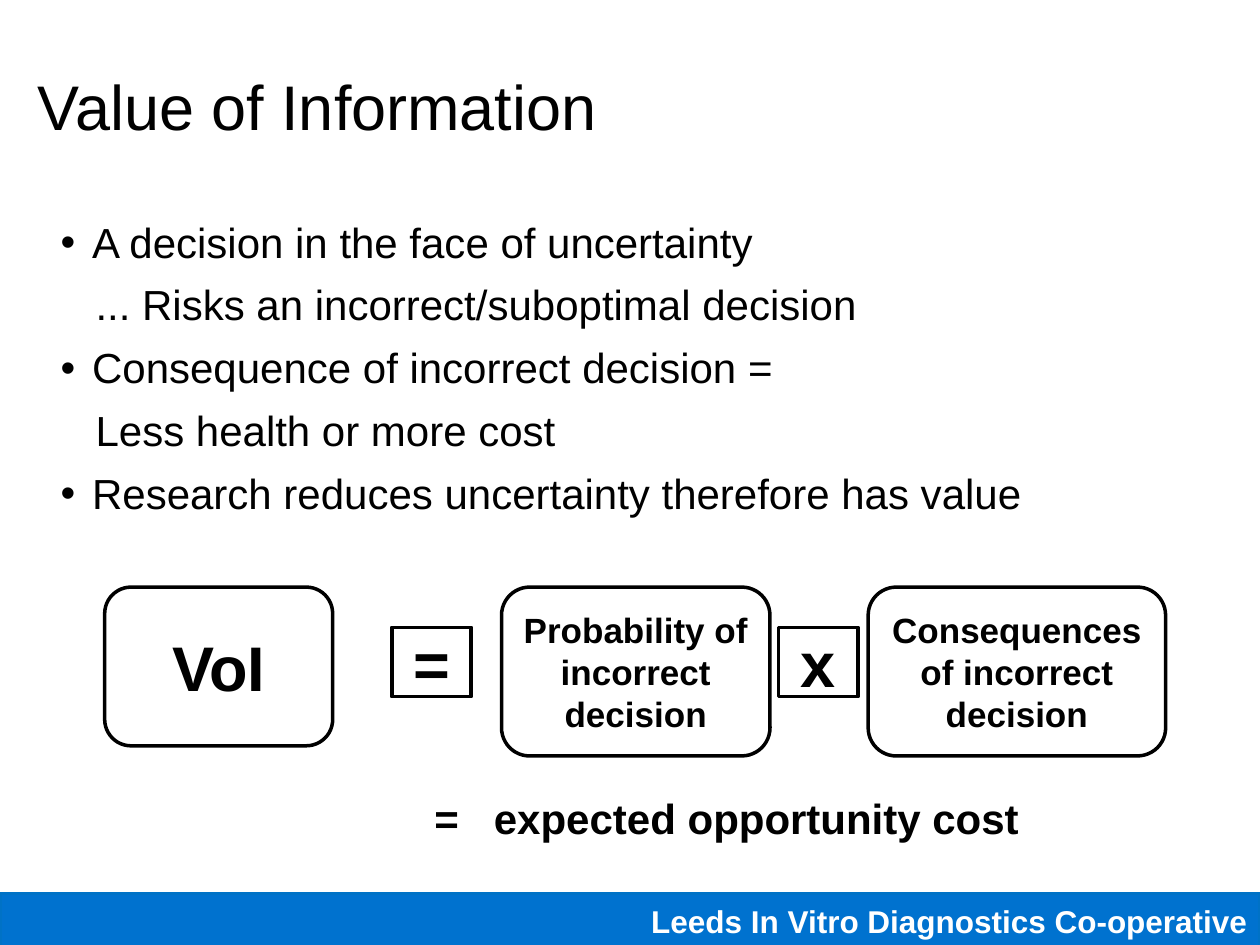
"""Build the Value of Information slide."""
from dataclasses import dataclass

import pptx
import pptx.dml.color
import pptx.enum.shapes
import pptx.enum.text
import pptx.oxml
import pptx.oxml.ns
import pptx.util

Pt = pptx.util.Pt
Kind = pptx.enum.shapes.MSO_SHAPE
Align = pptx.enum.text.PP_ALIGN
Anchor = pptx.enum.text.MSO_ANCHOR
INK = {"text": "000000", "paper": "FFFFFF", "bar": "0072CF", "edge": "0072C6"}


@dataclass
class Box:
    text: str
    left: float
    top: float
    width: float
    height: float
    size: float
    kind: int = Kind.ROUNDED_RECTANGLE
    fill: str = "paper"
    line: str = "text"
    ink: str = "text"
    align: int = Align.CENTER


@dataclass
class Item:
    text: str
    mark: bool = True


BOXES = [
    Box("Leeds In Vitro Diagnostics Co-operative", 0, 510.5, 720, 31.7, 18,
        Kind.RECTANGLE, "bar", "edge", "paper", Align.RIGHT),
    Box("VoI", 59.8, 335.5, 130.3, 90.7, 36),
    Box("Probability of incorrect decision", 286.6, 335.5, 153.4, 96.5, 20),
    Box("Consequences of incorrect decision", 496.1, 335.5, 170, 96.5, 20),
    Box("=", 223.9, 358.5, 45.4, 39.6, 36, Kind.RECTANGLE),
    Box("x", 445, 358.5, 45.4, 39.6, 36, Kind.RECTANGLE),
]
ITEMS = [
    Item("A decision in the face of uncertainty"),
    Item("... Risks an incorrect/suboptimal decision", False),
    Item("Consequence of incorrect decision ="),
    Item("Less health or more cost", False),
    Item("Research reduces uncertainty therefore has value"),
]


def tint(key: str) -> pptx.dml.color.RGBColor:
    """Return a named colour."""
    return pptx.dml.color.RGBColor.from_string(INK[key])


def style(para, size: float, bold: bool = False, ink: str = "text") -> None:
    """Format the runs of a paragraph."""
    for run in para.runs:
        run.font.name = "Arial"
        run.font.size = Pt(size)
        run.font.bold = bold
        run.font.color.rgb = tint(ink)


def place(shape, left: float, top: float, width: float, height: float) -> None:
    """Move and size a shape."""
    shape.left, shape.top = Pt(left), Pt(top)
    shape.width, shape.height = Pt(width), Pt(height)


def add_mark(para, tag: str, **attrs: str) -> None:
    """Append an element to the paragraph properties."""
    node = pptx.oxml.parse_xml(f"<a:{tag} {pptx.oxml.ns.nsdecls('a')}/>")
    for name, value in attrs.items():
        node.set(name, value)
    para._p.get_or_add_pPr().append(node)


def draw_box(slide, box: Box) -> None:
    """Draw a filled box with its label."""
    shape = slide.shapes.add_shape(
        box.kind, Pt(box.left), Pt(box.top), Pt(box.width), Pt(box.height))
    shape.shadow.inherit = False
    shape.fill.solid()
    shape.fill.fore_color.rgb = tint(box.fill)
    shape.line.color.rgb = tint(box.line)
    shape.line.width = Pt(2)
    frame = shape.text_frame
    frame.text = box.text
    frame.word_wrap = True
    frame.vertical_anchor = Anchor.MIDDLE
    para = frame.paragraphs[0]
    para.alignment = box.align
    style(para, box.size, True, box.ink)


def draw_title(shape, text: str) -> None:
    """Fill the title placeholder."""
    place(shape, 14.4, 15.1, 648, 90)
    frame = shape.text_frame
    frame.text = text
    frame.auto_size = pptx.enum.text.MSO_AUTO_SIZE.NONE
    frame.vertical_anchor = Anchor.MIDDLE
    frame.paragraphs[0].alignment = Align.LEFT
    style(frame.paragraphs[0], 36)


def draw_list(shape, items: list[Item]) -> None:
    """Fill the body placeholder with marked and plain lines."""
    place(shape, 27.4, 123.1, 620.6, 342.7)
    frame = shape.text_frame
    frame.text = "\n".join(item.text for item in items)
    frame.auto_size = pptx.enum.text.MSO_AUTO_SIZE.NONE
    for rank, (para, item) in enumerate(zip(frame.paragraphs, items)):
        para.line_spacing = 0.9
        para.space_before = Pt(10 if rank else 0)
        props = para._p.get_or_add_pPr()
        props.set("marL", str(Pt(18 if item.mark else 20)))
        props.set("indent", str(Pt(-18 if item.mark else 0)))
        if item.mark:
            add_mark(para, "buFont", typeface="Arial")
            add_mark(para, "buChar", char="•")
        else:
            add_mark(para, "buNone")
        style(para, 24)


def draw_sum(slide, text: str) -> None:
    """Write the closing line with a tab after its sign."""
    shape = slide.shapes.add_textbox(Pt(241.2), Pt(449.3), Pt(360), Pt(36))
    frame = shape.text_frame
    frame.text = text
    frame.word_wrap = True
    para = frame.paragraphs[0]
    add_mark(para, "tabLst")
    tabs = para._p.pPr[-1]
    tab = tabs.makeelement(pptx.oxml.ns.qn("a:tab"), {"pos": str(Pt(34)), "algn": "l"})
    tabs.append(tab)
    style(para, 24, True)


def main() -> None:
    """Build and save the slide."""
    deck = pptx.Presentation()
    deck.slide_width, deck.slide_height = Pt(720), Pt(540)
    slide = deck.slides.add_slide(deck.slide_layouts[1])
    draw_title(slide.shapes.title, "Value of Information")
    draw_list(slide.placeholders[1], ITEMS)
    for box in BOXES:
        draw_box(slide, box)
    draw_sum(slide, "=\texpected opportunity cost")
    deck.save("out.pptx")


if __name__ == "__main__":
    main()
